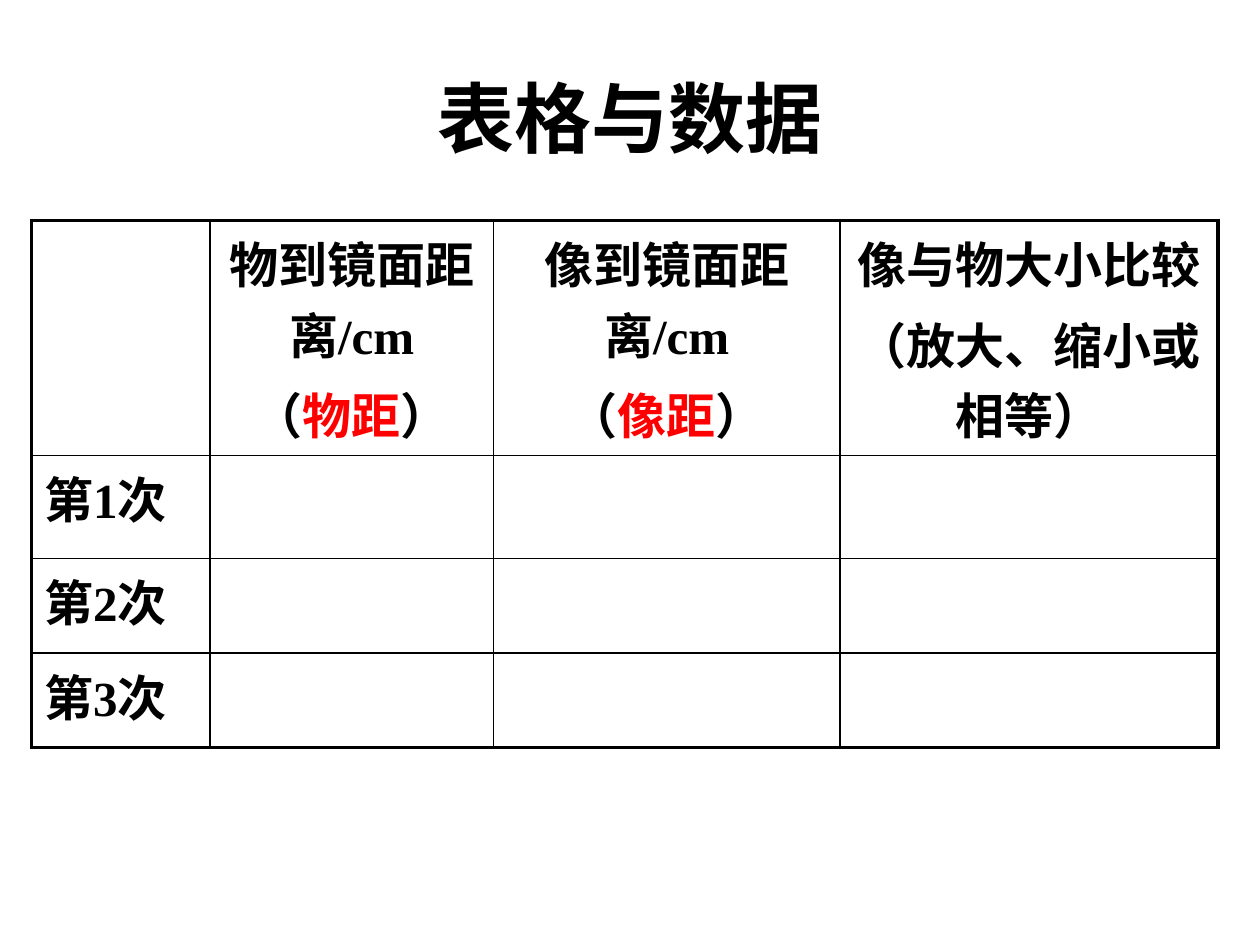
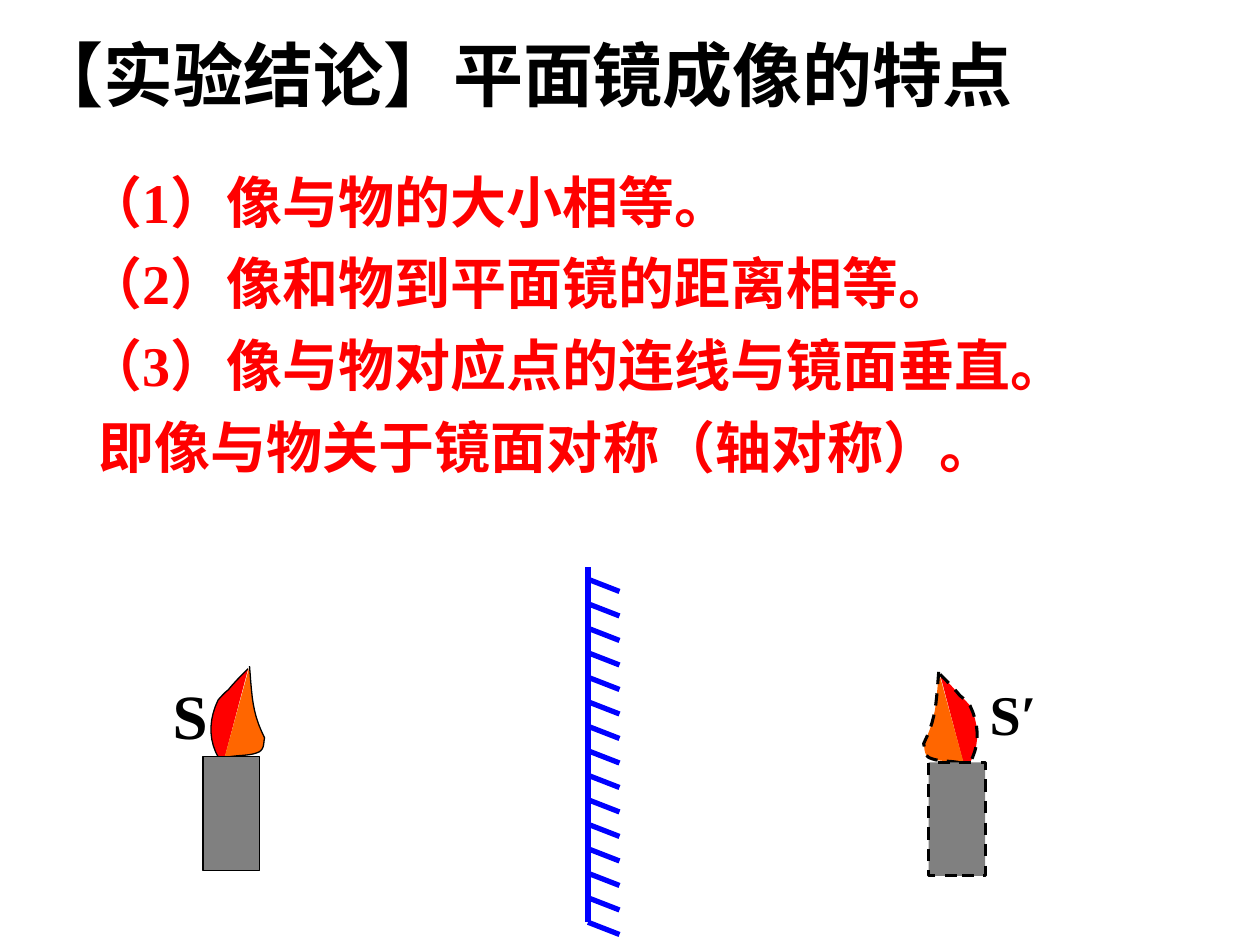
from lxml import etree
from pptx import Presentation
from pptx import util as u
from pptx.dml.color import RGBColor
from pptx.enum import dml, shapes, text
from pptx.oxml import ns

Pt = u.Pt
COLORS = {"ink": "000000", "key": "FF0000", "flame": "FF6600",
          "wax": "808080", "mirror": "0000FF"}
FONT = "Times New Roman"
DASH = dml.MSO_LINE.DASH
LEFT, CENTER = text.PP_ALIGN.LEFT, text.PP_ALIGN.CENTER

# Flame halves: start point, then three points per Bezier curve,
# measured from the top left corner of the candle
FLAME_RED = [(25.8, -50.4), (21.5, -46.1), (17.9, -42.5), (14.3, -38.1),
             (12.2, -36.7), (8.6, -32.4), (8.6, -32.4),
             (2.8, -20.1), (2.8, -7.2), (11.4, 4.3)]
FLAME_ORANGE = [(26.6, -51.8), (28, -34.5), (28, -25.2), (35.2, -10.8),
                (34.5, -7.9), (35.2, -5), (32.3, -2.9),
                (26.6, 0), (18.6, -1.4), (12.2, 0.7)]
CANDLE_W, CANDLE_H = 32.4, 64.8


def rgb(name):
    return RGBColor.from_string(COLORS[name])


def curve_points(points, steps=10):
    """Sample a chain of cubic Bezier curves."""
    result = [points[0]]
    for i in range(0, len(points) - 1, 3):
        a, b, c, d = points[i:i + 4]
        for k in range(1, steps + 1):
            t = k / steps
            v = 1 - t
            weights = (v ** 3, 3 * v * v * t, 3 * v * t * t, t ** 3)
            result.append(tuple(sum(w * p[axis] for w, p in zip(weights, (a, b, c, d)))
                                for axis in (0, 1)))
    return result


class Deck:
    def __init__(self):
        self.prs = Presentation()
        self.prs.slide_width, self.prs.slide_height = Pt(720), Pt(540)

    def slide(self, layout):
        self.s = self.prs.slides.add_slide(self.prs.slide_layouts[layout])
        self.shapes = self.s.shapes

    def group(self):
        self.shapes = self.s.shapes.add_group_shape().shapes

    def run(self, p, words, size, color="ink"):
        r = p.add_run()
        r.text = words
        for key, value in {"name": FONT, "size": Pt(size), "bold": True}.items():
            setattr(r.font, key, value)
        r.font.color.rgb = rgb(color)

    def place(self, sp, box):
        for key, value in zip(("left", "top", "width", "height"), box):
            setattr(sp, key, Pt(value))
        sp.text_frame.auto_size = text.MSO_AUTO_SIZE.NONE

    def title(self, words, box, size, align):
        sp = self.s.shapes.title
        self.place(sp, box)
        sp.text_frame.vertical_anchor = text.MSO_ANCHOR.MIDDLE
        p = sp.text_frame.paragraphs[0]
        p.alignment = align
        self.run(p, words, size)

    def body(self, lines, box, size, color):
        sp = self.s.placeholders[1]
        self.place(sp, box)
        tf = sp.text_frame
        for i, line in enumerate(lines):
            p = tf.add_paragraph() if i else tf.paragraphs[0]
            p.line_spacing = 1.05
            pPr = p._p.get_or_add_pPr()
            pPr.set("marL", str(Pt(27)))
            pPr.set("indent", str(Pt(-27)))
            etree.SubElement(pPr, ns.qn("a:buNone"))
            self.run(p, line, size, color)

    def label(self, words, box, size):
        sp = self.shapes.add_textbox(*map(Pt, box))
        tf = sp.text_frame
        tf.word_wrap = False
        tf.auto_size = text.MSO_AUTO_SIZE.SHAPE_TO_FIT_TEXT
        self.run(tf.paragraphs[0], words, size)

    def style(self, sp, fill, width, dash):
        sp.shadow.inherit = False
        sp.fill.solid()
        sp.fill.fore_color.rgb = rgb(fill)
        sp.line.color.rgb = rgb("ink")
        sp.line.width = Pt(width)
        if dash:
            sp.line.dash_style = dash

    def rect(self, box, **look):
        sp = self.shapes.add_shape(shapes.MSO_SHAPE.RECTANGLE, *map(Pt, box))
        self.style(sp, **look)

    def outline(self, points, **look):
        start, *rest = [(Pt(x), Pt(y)) for x, y in points]
        builder = self.shapes.build_freeform(*start, scale=1.0)
        builder.add_line_segments(rest, close=False)
        self.style(builder.convert_to_shape(), **look)

    def line(self, x1, y1, x2, y2, color, width):
        sp = self.shapes.add_connector(shapes.MSO_CONNECTOR.STRAIGHT,
                                       *map(Pt, (x1, y1, x2, y2)))
        sp.line.color.rgb = rgb(color)
        sp.line.width = Pt(width)
        etree.SubElement(sp._element.spPr, ns.qn("a:effectLst"))

    def border(self, cell, side, width):
        ln = etree.SubElement(cell._tc.get_or_add_tcPr(), ns.qn("a:ln" + side), w=str(Pt(width)))
        fill = etree.SubElement(ln, ns.qn("a:solidFill"))
        etree.SubElement(fill, ns.qn("a:srgbClr"), val=COLORS["ink"])

    def table(self, left, top, widths, heights, rows, size):
        """Each cell is a list of paragraphs, each a list of (words, colour)."""
        box = (left, top, sum(widths), sum(heights))
        tbl = self.shapes.add_table(len(heights), len(widths), *map(Pt, box)).table
        tbl.first_row = tbl.horz_banding = False
        for col, width in zip(tbl.columns, widths):
            col.width = Pt(width)
        for row, height in zip(tbl.rows, heights):
            row.height = Pt(height)
        last_row, last_col = len(heights) - 1, len(widths) - 1
        for i, row in enumerate(rows):
            for j, paragraphs in enumerate(row):
                cell = tbl.cell(i, j)
                # Thick frame outside, thin grid inside
                outer = {"L": j == 0, "R": j == last_col, "T": i == 0, "B": i == last_row}
                for side, thick in outer.items():
                    self.border(cell, side, 2.25 if thick else 1)
                cell.fill.background()
                tf = cell.text_frame
                for k, runs in enumerate(paragraphs):
                    p = tf.add_paragraph() if k else tf.paragraphs[0]
                    p.alignment = LEFT if i else CENTER
                    p.space_before = Pt(size * 0.2)
                    for words, color in runs:
                        self.run(p, words, size, color)

    def candle(self, x, y, direction, width, dash=None):
        """Draw a candle from its corner at x; direction -1 mirrors it."""
        for fill, flame in (("key", FLAME_RED), ("flame", FLAME_ORANGE)):
            points = [(x + direction * dx, y + dy) for dx, dy in curve_points(flame)]
            self.outline(points, fill=fill, width=width, dash=dash)
        left = min(x, x + direction * CANDLE_W)
        self.rect((left, y, CANDLE_W, CANDLE_H), fill="wax", width=width, dash=dash)


def distance_header(heading, short):
    return [[(heading, "ink")], [("（", "ink"), (short, "key"), ("）", "ink")]]


def data_slide(deck):
    deck.slide(5)
    deck.title("表格与数据", (36, 21.6, 648, 90), 44, CENTER)
    header = [[],
              distance_header("物到镜面距离/cm", "物距"),
              distance_header("像到镜面距离/cm", "像距"),
              [[("像与物大小比较", "ink")], [("（放大、缩小或相等）", "ink")]]]
    trials = [[[[(f"第{n}次", "ink")]], [], [], []] for n in (1, 2, 3)]
    deck.table(18, 126, (102, 162, 198, 216), (108, 59, 54, 54), [header] + trials, 28)


def conclusion_slide(deck):
    deck.slide(1)
    deck.title("【实验结论】平面镜成像的特点", (12, 12, 600, 60), 40, LEFT)
    deck.body(["（1）像与物的大小相等。",
               "（2）像和物到平面镜的距离相等。",
               "（3）像与物对应点的连线与镜面垂直。",
               " 即像与物关于镜面对称（轴对称）。"], (42, 90, 630, 252), 32, "key")

    # Object
    deck.group()
    deck.candle(116, 432.5, 1, 0.75)
    deck.label("S", (91.5, 383, 34.5, 51), 36)

    # Mirror with hatching on its back
    deck.group()
    mirror_x, bottom = 336, 527
    deck.line(mirror_x, bottom, mirror_x, 324, "mirror", 3)
    for i in range(15):
        y = bottom - 14 * i
        deck.line(mirror_x, y, mirror_x + 18, y + 7, "mirror", 3)

    # Virtual image
    deck.group()
    deck.candle(563, 435.75, -1, 1.75, DASH)
    deck.label("S′", (558.5, 384.5, 42, 46), 32)


def main():
    deck = Deck()
    data_slide(deck)
    conclusion_slide(deck)
    deck.prs.save("out.pptx")


if __name__ == "__main__":
    main()
